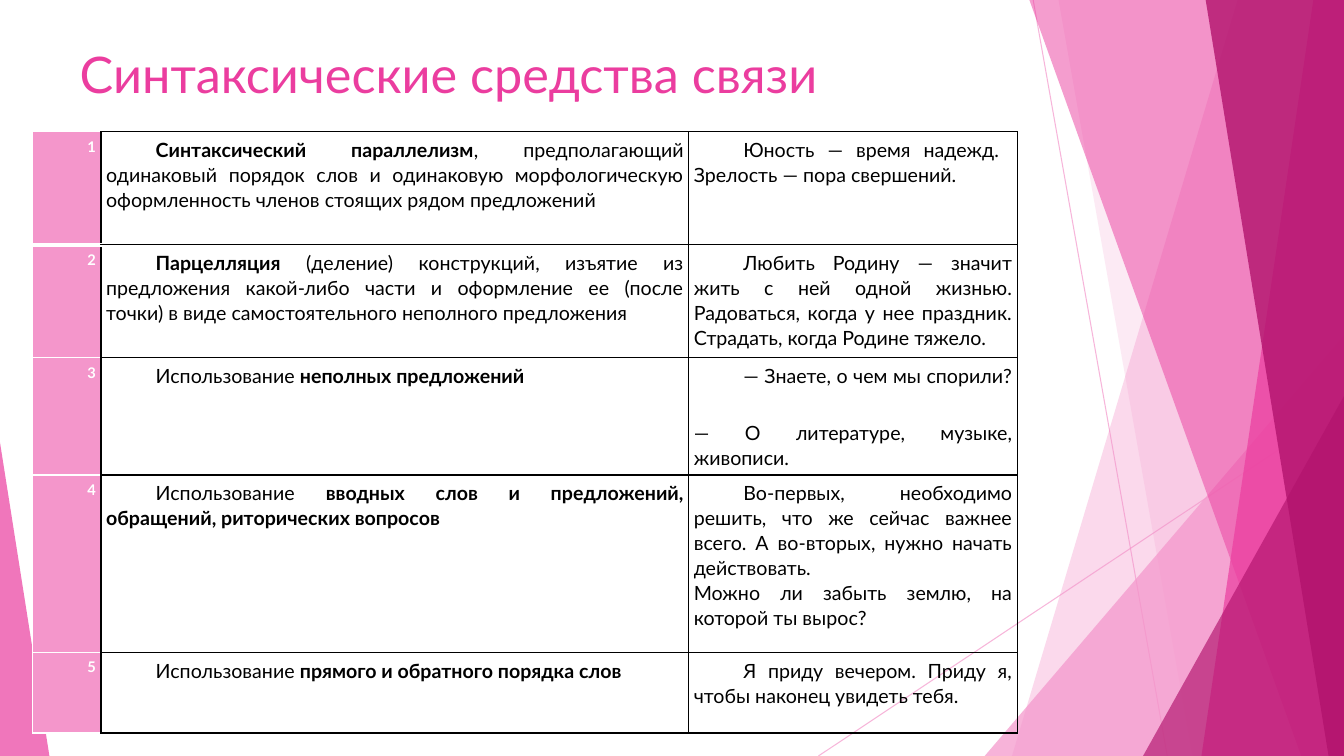
from lxml.etree import SubElement
from pptx import Presentation
from pptx.dml.color import RGBColor
from pptx.enum.shapes import MSO_CONNECTOR as Connector, MSO_SHAPE as Preset
from pptx.enum.text import MSO_ANCHOR as Anchor, PP_ALIGN as Align
from pptx.oxml.ns import qn
from pptx.util import Pt

PINK, ROSE, PLUM = "F496CB", "EB3D9F", "B2136D"
BLACK, WHITE = "000000", "FFFFFF"
FONT = "Lato"
SLIDE_WIDTH, SLIDE_HEIGHT = 960, 540

TITLE = "Синтаксические средства связи"
TITLE_BOX = (49.7, 25.2, 676.8, 54)

DEVICES = [
    ([("Синтаксический параллелизм", True),
      (", предполагающий одинаковый порядок слов и одинаковую морфологическую "
       "оформленность членов стоящих рядом предложений", False)],
     ["Юность — время надежд. ", "Зрелость — пора свершений."]),
    ([("Парцелляция", True),
      (" (деление) конструкций, изъятие из предложения какой-либо части и "
       "оформление ее (после точки) в виде самостоятельного неполного предложения", False)],
     ["Любить Родину — значит жить с ней одной жизнью. Радоваться, когда у нее "
      "праздник. Страдать, когда Родине тяжело."]),
    ([("Использование ", False), ("неполных предложений", True)],
     ["— Знаете, о чем мы спорили? ", "— О литературе, музыке, живописи."]),
    ([("Использование ", False),
      ("вводных слов и предложений, обращений, риторических вопросов", True)],
     ["Во-первых, необходимо решить, что же сейчас важнее всего. "
      "А во-вторых, нужно начать действовать. ",
      "Можно ли забыть землю, на которой ты вырос?"]),
    ([("Использование ", False), ("прямого и обратного порядка слов", True)],
     ["Я приду вечером. Приду я, чтобы наконец увидеть тебя."]),
]
TABLE_LEFT, TABLE_TOP = 23.4, 94.2
COLUMN_WIDTHS = [48.8, 419.8, 234.6]
ROW_HEIGHTS = [80.6, 80.6, 78.5, 126.7, 57.6]

RAYS = [((738, 0), (833.8, 540)), ((960, 290.2), (584.6, 540))]
BAND_TOP = -0.6
FACETS = [
    ("band", (884.2, 722.9), PINK, 36),
    ("band", (756, 851.8), PINK, 20),
    ("triangle", (703.4, 239.8, 256.6, 300.2, 1), PINK, 72),
    ("band", (735.1, 929.5), ROSE, 50),
    ("band", (938.2, 858.2), ROSE, 70),
    ("band", (861.1, 949), PLUM, 80),
    ("triangle", (816.5, 283, 143.5, 257, 1), PLUM, 66),
    ("triangle", (0, 316.1, 35.3, 223.9, 0), ROSE, 70),
]

CELL_FORMAT = {"margin_left": Pt(3.6), "margin_right": Pt(3.6), "margin_top": Pt(3.6),
               "margin_bottom": Pt(3.6), "vertical_anchor": Anchor.TOP}
NUMBER_FONT = {"name": FONT, "size": Pt(10.5), "bold": True}
BODY_FONT = {"name": FONT, "size": Pt(14)}
TITLE_FONT = {"name": FONT, "size": Pt(36), "bold": False}


def apply(target, values):
    for attribute, value in values.items():
        setattr(target, attribute, value)


def rgb(code):
    return RGBColor.from_string(code)


def paint(fill, color, opacity=100):
    fill.solid()
    fill.fore_color.rgb = rgb(color)
    if opacity < 100:
        swatch = fill._xPr.find(qn("a:solidFill")).find(qn("a:srgbClr"))
        SubElement(swatch, qn("a:alpha"), val=str(opacity * 1000))


def border(cell, sides):
    properties = cell._tc.get_or_add_tcPr()
    for side in "LRTB":
        color, width = sides[side]
        edge = SubElement(properties, qn("a:ln" + side), w=str(Pt(width)))
        SubElement(SubElement(edge, qn("a:solidFill")), qn("a:srgbClr"), val=color)


def write(paragraph, text, font, color):
    run = paragraph.add_run()
    run.text = text
    apply(run.font, font)
    run.font.color.rgb = rgb(color)


def start_cell(cell, align, sides):
    apply(cell, CELL_FORMAT)
    border(cell, sides)
    paragraph = cell.text_frame.paragraphs[0]
    apply(paragraph, {"alignment": align, "line_spacing": 1.06, "space_after": Pt(8)})
    paragraph._p.get_or_add_pPr().set("indent", str(Pt(35.4)))
    return paragraph


def add_backdrop(shapes):
    for start, end in RAYS:
        ray = shapes.add_connector(Connector.STRAIGHT, *map(Pt, start + end))
        ray.line.width = Pt(0.75)
        paint(ray.line.fill, PINK, 70)
        SubElement(ray._element.spPr, qn("a:effectLst"))
    for kind, geometry, color, opacity in FACETS:
        if kind == "band":
            top_x, bottom_x = geometry
            outline = shapes.build_freeform(Pt(top_x), Pt(BAND_TOP))
            corners = [(SLIDE_WIDTH, BAND_TOP), (SLIDE_WIDTH, SLIDE_HEIGHT),
                       (bottom_x, SLIDE_HEIGHT)]
            outline.add_line_segments([(Pt(x), Pt(y)) for x, y in corners], close=True)
            facet = outline.convert_to_shape()
        else:
            *box, apex = geometry
            facet = shapes.add_shape(Preset.ISOSCELES_TRIANGLE, *map(Pt, box))
            facet.adjustments[0] = apex
        facet.shadow.inherit = False
        paint(facet.fill, color, opacity)
        facet.line.fill.background()


def add_title(title):
    apply(title, dict(zip(("left", "top", "width", "height"), map(Pt, TITLE_BOX))))
    apply(title.text_frame, {"vertical_anchor": Anchor.MIDDLE, "word_wrap": True})
    heading = title.text_frame.paragraphs[0]
    heading.alignment = Align.LEFT
    write(heading, TITLE, TITLE_FONT, ROSE)


def add_devices(shapes):
    table = shapes.add_table(
        len(DEVICES), len(COLUMN_WIDTHS), Pt(TABLE_LEFT), Pt(TABLE_TOP),
        Pt(sum(COLUMN_WIDTHS)), Pt(sum(ROW_HEIGHTS))).table
    apply(table, {"first_row": False, "horz_banding": False})
    for column, width in zip(table.columns, COLUMN_WIDTHS):
        column.width = Pt(width)
    black_sides = dict.fromkeys("LRTB", (BLACK, 1))
    for index, (device, examples) in enumerate(DEVICES):
        table.rows[index].height = Pt(ROW_HEIGHTS[index])
        number_cell, device_cell, example_cell = table.rows[index].cells

        number_sides = {"L": (WHITE, 1), "R": (BLACK, 1), "T": (WHITE, 1),
                        "B": (WHITE, 1 if index else 3)}
        number = start_cell(number_cell, Align.CENTER, number_sides)
        write(number, str(index + 1), NUMBER_FONT, WHITE)
        paint(number_cell.fill, PINK)

        description = start_cell(device_cell, Align.JUSTIFY, black_sides)
        for text, bold in device:
            write(description, text, {**BODY_FONT, "bold": bold}, BLACK)
        device_cell.fill.background()

        example = start_cell(example_cell, Align.JUSTIFY, black_sides)
        for position, line in enumerate(examples):
            if position:
                example.add_line_break()
            write(example, line, {**BODY_FONT, "bold": False}, BLACK)
        example_cell.fill.background()


def main():
    deck = Presentation()
    apply(deck, {"slide_width": Pt(SLIDE_WIDTH), "slide_height": Pt(SLIDE_HEIGHT)})
    slide = deck.slides.add_slide(deck.slide_layouts[5])
    add_backdrop(slide.shapes)
    add_title(slide.shapes.title)
    add_devices(slide.shapes)
    deck.save("out.pptx")


if __name__ == "__main__":
    main()
